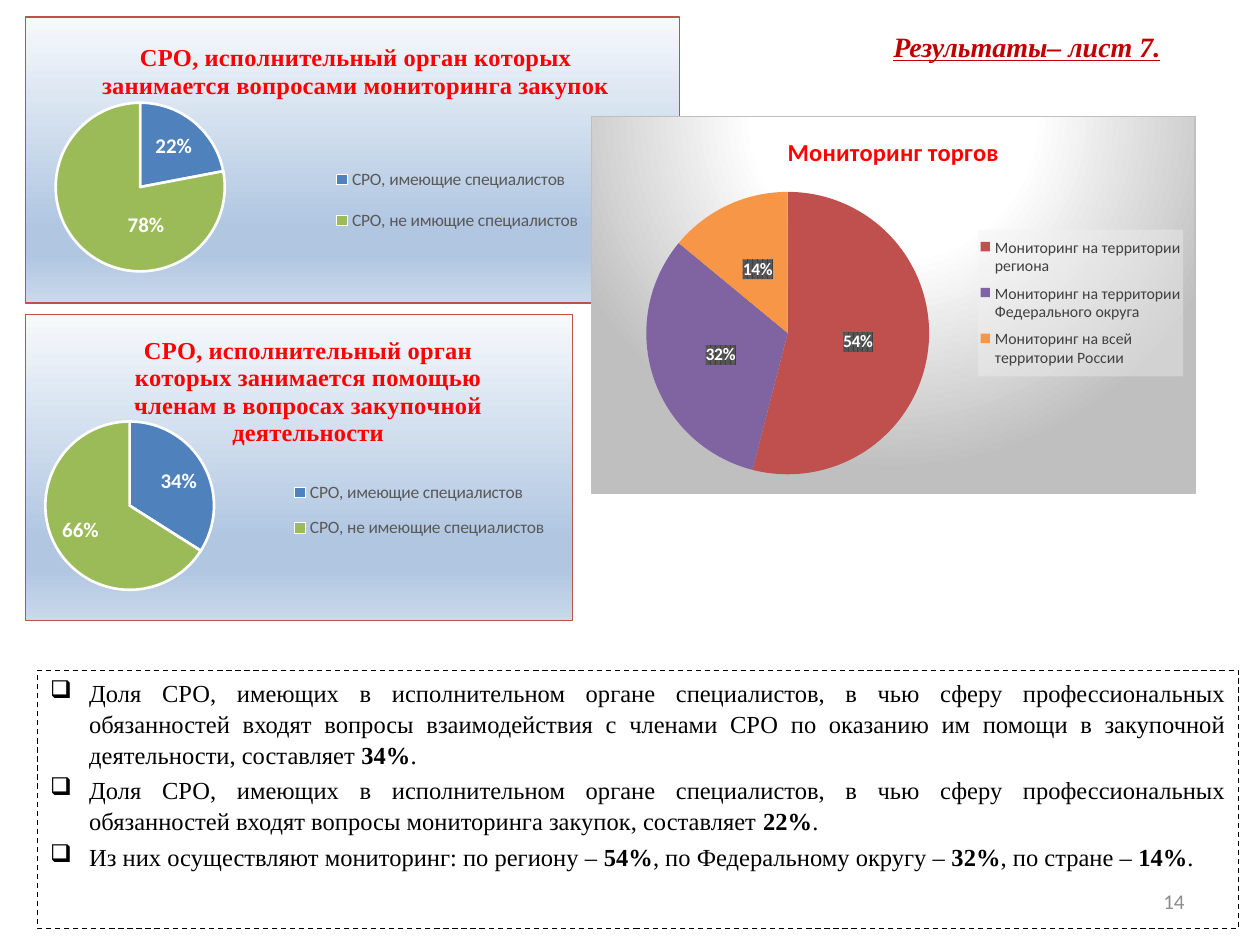
from dataclasses import dataclass

from lxml import etree
from pptx import Presentation
from pptx.chart.data import CategoryChartData
from pptx.dml.color import RGBColor
from pptx.enum import chart as chart_enum, dml, shapes, text
from pptx.oxml import parse_xml
from pptx.oxml.ns import nsdecls, qn
from pptx.util import Inches, Pt


@dataclass(frozen=True)
class Theme:
    serif: str = "Times New Roman"
    sans: str = "Calibri"
    black: str = "000000"
    white: str = "FFFFFF"
    heading: str = "C00000"
    chart_title: str = "FF0000"
    legend: str = "595959"
    legend_dark: str = "404040"
    page: str = "8C8C8C"
    blue: str = "4F81BD"
    green: str = "9BBB59"
    red: str = "C0504D"
    violet: str = "8064A2"
    orange: str = "F79646"
    gray: str = "BFBFBF"
    heading_size: int = 16
    text_size: int = 14
    small: int = 12
    label: int = 10
    legend_small: int = 9


THEME = Theme()
BLUE_GRADIENT = ([(0, "F6F9FC"), (74, "B0C6E1"), (83, "B0C6E1"), (100, "CAD9EB")],
                 '<a:lin ang="5400000" scaled="0"/>')
GRAY_GRADIENT = ([(0, THEME.white), (39, THEME.white), (100, THEME.gray)],
                 '<a:path path="circle"><a:fillToRect l="50000" t="-80000" '
                 'r="50000" b="180000"/></a:path>')
SHARE = "Доля СРО, имеющих в исполнительном органе специалистов, в чью сферу профессиональных обязанностей входят вопросы "
# Runs alternate between regular and bold.
FINDINGS = [
    [SHARE + "взаимодействия с членами СРО по оказанию им помощи в закупочной деятельности, составляет ",
     "34%", "."],
    [SHARE + "мониторинга закупок, составляет ", "22%", "."],
    ["Из них осуществляют мониторинг: по региону – ", "54%", ", по Федеральному округу – ",
     "32%", ", по стране – ", "14%", "."],
]


def style_font(font, size, color, name=THEME.sans, bold=False):
    font.size, font.name, font.bold = Pt(size), name, bold
    font.color.rgb = RGBColor.from_string(color)


def add_heading(slide):
    title = slide.shapes.title
    title.left, title.top, title.width, title.height = map(Inches, (0.81, 0.21, 8.5, 0.31))
    frame = title.text_frame
    frame.text = "Результаты– лист 7."
    frame.vertical_anchor = text.MSO_ANCHOR.MIDDLE
    paragraph = frame.paragraphs[0]
    paragraph.alignment = text.PP_ALIGN.RIGHT
    style_font(paragraph.font, THEME.heading_size, THEME.heading, THEME.serif, True)
    paragraph.font.italic = paragraph.font.underline = True


def add_findings(slide):
    box = slide.shapes.add_shape(shapes.MSO_SHAPE.RECTANGLE,
                                 *map(Inches, (0.3, 5.32, 9.53, 2.05)))
    box.shadow.inherit = False
    box.fill.background()
    box.line.color.rgb = RGBColor.from_string(THEME.black)
    box.line.width = Pt(0.75)
    box.line.dash_style = dml.MSO_LINE.DASH
    frame = box.text_frame
    frame.word_wrap = True
    frame.vertical_anchor = text.MSO_ANCHOR.TOP
    for index, pieces in enumerate(FINDINGS):
        paragraph = frame.add_paragraph() if index else frame.paragraphs[0]
        paragraph.alignment = text.PP_ALIGN.JUSTIFY
        paragraph.line_spacing = 1.05
        if index:
            paragraph.space_before = Pt(2.8)
        properties = paragraph._p.get_or_add_pPr()
        properties.set("marL", str(Inches(0.31)))
        properties.set("indent", str(-Inches(0.31)))
        etree.SubElement(properties, qn("a:buChar"), char="❑")
        style_font(paragraph.font, THEME.text_size, THEME.black, THEME.serif)
        for position, piece in enumerate(pieces):
            run = paragraph.add_run()
            run.text = piece
            run.font.bold = position % 2 == 1


def layout_xml(x, y, width=None, height=None, inner=False, absolute=True):
    parts = ['<c:layoutTarget val="inner"/>'] if inner else []
    if absolute:
        parts += ['<c:xMode val="edge"/>', '<c:yMode val="edge"/>']
    for name, value in zip("xywh", (x, y, width, height)):
        if value is not None:
            parts.append(f'<c:{name} val="{value}"/>')
    return parse_xml(f'<c:layout {nsdecls("c")}><c:manualLayout>{"".join(parts)}'
                     '</c:manualLayout></c:layout>')


def replace_layout(parent, layout, after=None):
    """Set a layout as first child, or right after the named child."""
    for old in parent.findall(qn("c:layout")):
        parent.remove(old)
    anchor = parent.find(qn(after)) if after else None
    if anchor is None:
        parent.insert(0, layout)
    else:
        anchor.addnext(layout)


def shape_properties(content):
    return parse_xml(f'<c:spPr {nsdecls("c", "a")}>{content}</c:spPr>')


def fill_chart(chart, gradient, border):
    stops, direction = gradient
    stop_xml = "".join(f'<a:gs pos="{place * 1000}"><a:srgbClr val="{color}"/></a:gs>'
                       for place, color in stops)
    chart._chartSpace.find(qn("c:chart")).addnext(shape_properties(
        f'<a:gradFill><a:gsLst>{stop_xml}</a:gsLst>{direction}</a:gradFill>'
        f'<a:ln w="{Pt(0.75)}"><a:solidFill><a:srgbClr val="{border}"/></a:solidFill></a:ln>'))


def add_pie(slide, box, title, title_font, values, colors, gradient, border, plot_box,
            legend_box, legend_size=THEME.label, legend_color=THEME.legend, title_at=None,
            label_size=THEME.small, label_position=chart_enum.XL_LABEL_POSITION.CENTER,
            percent=False, slice_line=True):
    data = CategoryChartData(number_format="General" if percent else "0%")
    data.categories = list(values)
    data.add_series("Series 1", list(values.values()))
    chart = slide.shapes.add_chart(chart_enum.XL_CHART_TYPE.PIE, *map(Inches, box), data).chart
    style_font(chart.font, THEME.label, THEME.black)
    fill_chart(chart, gradient, border)

    chart.has_title = True
    frame = chart.chart_title.text_frame
    frame.text = title
    style_font(frame.paragraphs[0].runs[0].font, THEME.text_size, THEME.chart_title,
               title_font, True)
    if title_at:
        replace_layout(chart.chart_title._element, layout_xml(*title_at), "c:tx")

    chart.has_legend = True
    legend = chart.legend
    legend.position = (chart_enum.XL_LEGEND_POSITION.RIGHT if percent
                       else chart_enum.XL_LEGEND_POSITION.BOTTOM)
    legend.include_in_layout = False
    style_font(legend.font, legend_size, legend_color)
    replace_layout(legend._element, layout_xml(*legend_box), "c:legendPos")

    plot = chart.plots[0]
    plot.vary_by_categories = True
    replace_layout(chart._chartSpace.chart.plotArea, layout_xml(*plot_box, inner=True))
    plot.has_data_labels = True
    labels = plot.series[0].data_labels
    labels.show_percentage, labels.show_value = percent, not percent
    labels.number_format, labels.number_format_is_linked = "0%", False
    labels.position = label_position
    style_font(labels.font, label_size, THEME.white, bold=True)
    for index, color in enumerate(colors):
        style = plot.series[0].points[index].format
        style.fill.solid()
        style.fill.fore_color.rgb = RGBColor.from_string(color)
        if slice_line:
            style.line.color.rgb = RGBColor.from_string(THEME.white)
            style.line.width = Pt(1.5)
    return chart


def move_label(chart, index, offset):
    label = chart.plots[0].series[0].points[index].data_label
    style_font(label.font, THEME.small, THEME.white, bold=True)
    label.position = chart_enum.XL_LABEL_POSITION.CENTER
    element = label._dLbl
    layout = layout_xml(*offset, absolute=False)
    replace_layout(element, layout, "c:idx")
    layout.addnext(parse_xml(f'<c:numFmt {nsdecls("c")} formatCode="0%" sourceLinked="0"/>'))


def shade_legend_and_labels(chart):
    legend = chart.legend._element
    legend.find(qn("c:txPr")).addprevious(shape_properties(
        '<a:solidFill><a:srgbClr val="F2F2F2"><a:alpha val="39000"/></a:srgbClr></a:solidFill>'))
    labels = chart.plots[0].series[0].data_labels._element
    labels.find(qn("c:txPr")).addprevious(shape_properties(
        '<a:pattFill prst="pct75"><a:fgClr><a:srgbClr val="404040"/></a:fgClr>'
        '<a:bgClr><a:srgbClr val="595959"/></a:bgClr></a:pattFill>'))


def add_page_number(slide):
    box = slide.shapes.add_textbox(*map(Inches, (7.17, 6.95, 2.33, 0.4)))
    frame = box.text_frame
    frame.word_wrap = True
    frame.vertical_anchor = text.MSO_ANCHOR.MIDDLE
    frame.text = "14"
    frame.paragraphs[0].alignment = text.PP_ALIGN.RIGHT
    style_font(frame.paragraphs[0].font, THEME.small, THEME.page)


def main():
    presentation = Presentation()
    presentation.slide_width, presentation.slide_height = Inches(10), Inches(7.5)
    slide = presentation.slides.add_slide(presentation.slide_layouts[5])
    add_heading(slide)
    add_findings(slide)
    specialists = dict(title_font=THEME.serif, colors=(THEME.blue, THEME.green),
                       gradient=BLUE_GRADIENT, border=THEME.red)
    procurement = add_pie(
        slide, (0.2, 0.13, 5.2, 2.28),
        "СРО, исполнительный орган которых занимается вопросами мониторинга закупок",
        values={"СРО, имеющие специалистов": 0.22, "СРО, не имющие специалистов": 0.78},
        plot_box=(0.02, 0.3, 0.31, 0.59), legend_box=(0.46, 0.46, 0.4, 0.36),
        title_at=(0.11, 0.07), **specialists)
    for index, offset in enumerate([(0.01, -0.03), (0.05, 0.02)]):
        move_label(procurement, index, offset)
    add_pie(
        slide, (0.2, 2.49, 4.35, 2.44),
        "СРО, исполнительный орган которых занимается помощью членам в вопросах закупочной деятельности",
        values={"СРО, имеющие специалистов": 0.34, "СРО, не имеющие специалистов": 0.66},
        plot_box=(0.03, 0.35, 0.32, 0.55), legend_box=(0.48, 0.5, 0.48, 0.28),
        title_at=(0.19, 0.05), label_position=chart_enum.XL_LABEL_POSITION.INSIDE_END,
        **specialists)
    trades = add_pie(
        slide, (4.69, 0.92, 4.8, 3), "Мониторинг торгов", THEME.sans,
        {"Мониторинг на территории региона": 54,
         "Мониторинг на территории Федерального округа": 32,
         "Мониторинг на всей территории России": 14},
        (THEME.red, THEME.violet, THEME.orange), GRAY_GRADIENT, THEME.gray,
        (0.09, 0.2, 0.47, 0.75), (0.64, 0.3, 0.34, 0.39), THEME.legend_small,
        THEME.legend_dark, label_size=THEME.label, percent=True, slice_line=False)
    shade_legend_and_labels(trades)
    add_page_number(slide)
    presentation.save("out.pptx")


if __name__ == "__main__":
    main()
